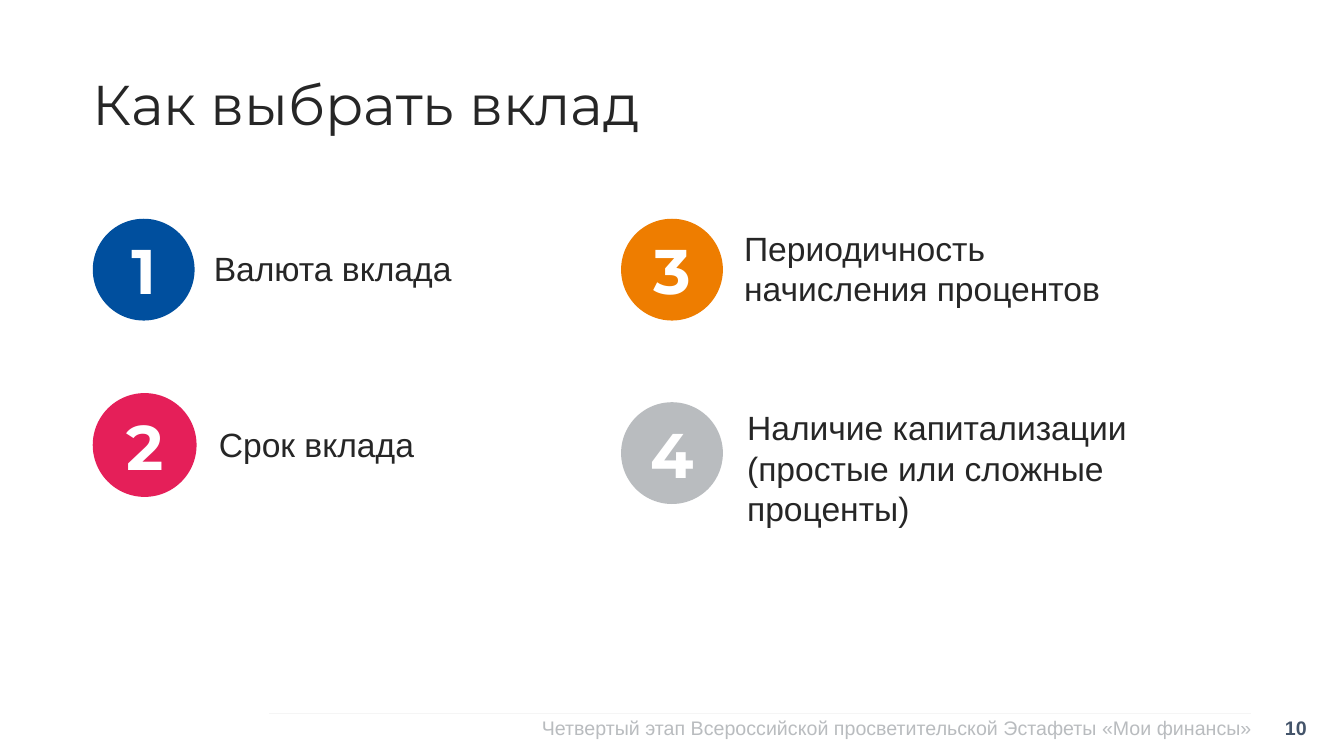
from dataclasses import dataclass

from lxml.etree import SubElement
from pptx import Presentation
from pptx.dml.color import RGBColor
from pptx.enum.shapes import MSO_CONNECTOR as Connector, MSO_SHAPE as Shape
from pptx.enum.text import MSO_ANCHOR as Anchor, PP_ALIGN as Align
from pptx.oxml.ns import qn
from pptx.util import Inches, Pt


@dataclass(frozen=True)
class Theme:
    heading: str = "Montserrat"
    body: str = "Arial"
    ink: str = "262626"
    white: str = "FFFFFF"
    blue: str = "004F9E"
    pink: str = "E51F59"
    orange: str = "EE7D00"
    grey: str = "B9BCBF"
    rule: str = "F5F5F5"
    slate: str = "44546A"
    title_size: int = 40
    number_size: int = 45
    item_size: int = 24
    footer_size: int = 14


class SlideBuilder:
    def __init__(self, slide, theme):
        self.slide = slide
        self.theme = theme

    def fill_frame(self, frame, wording, font, size, color, bold=False,
                   align=Align.LEFT, anchor=Anchor.TOP, spacing=None):
        frame.word_wrap = True
        frame.vertical_anchor = anchor
        frame.margin_left = frame.margin_right = 0
        frame.margin_top = frame.margin_bottom = 0
        paragraph = frame.paragraphs[0]
        paragraph.alignment = align
        paragraph.line_spacing = spacing
        for index, line in enumerate(wording.split("\n")):
            if index:
                paragraph.add_line_break()
            run = paragraph.add_run()
            run.text = line
            run.font.name = font
            run.font.size = Pt(size)
            run.font.bold = bold
            run.font.color.rgb = RGBColor.from_string(color)

    def text(self, box, wording, font, size, color, **style):
        area = self.slide.shapes.add_textbox(*map(Inches, box))
        self.fill_frame(area.text_frame, wording, font, size, color, **style)

    def badge(self, left, top, diameter, number, color):
        theme = self.theme
        circle = self.slide.shapes.add_shape(
            Shape.OVAL, *map(Inches, (left, top, diameter, diameter)))
        circle.shadow.inherit = False
        circle.fill.solid()
        circle.fill.fore_color.rgb = RGBColor.from_string(color)
        circle.line.fill.background()
        self.fill_frame(circle.text_frame, str(number), theme.heading,
                        theme.number_size, theme.white, bold=True,
                        align=Align.CENTER, anchor=Anchor.MIDDLE)

    def rule(self, left, right, y):
        rule = self.slide.shapes.add_connector(
            Connector.STRAIGHT, *map(Inches, (left, y, right, y)))
        rule.line.width = Pt(1)
        rule.line.color.rgb = RGBColor.from_string(self.theme.rule)
        SubElement(rule._element.spPr, qn("a:effectLst"))


def main():
    theme = Theme()
    deck = Presentation()
    deck.slide_width, deck.slide_height = Inches(13.33), Inches(7.5)
    builder = SlideBuilder(deck.slides.add_slide(deck.slide_layouts[6]), theme)

    builder.rule(2.67, 12.41, 7.08)
    builder.text((5.08, 7.1, 7.34, 0.45),
                 "Четвертый этап Всероссийской просветительской Эстафеты «Мои финансы»",
                 theme.body, theme.footer_size, theme.grey, align=Align.RIGHT)
    builder.text((12.41, 7.1, 0.55, 0.4), "10", theme.body, theme.footer_size,
                 theme.slate, bold=True, align=Align.RIGHT)
    builder.text((0.92, 0.77, 7.13, 1.24), "Как выбрать вклад", theme.heading,
                 theme.title_size, theme.ink, spacing=0.9)

    left_column, right_column = 0.92, 6.16
    criteria = [
        (left_column, 2.17, 1.01, theme.blue,
         (2.12, 2.46, 3.38, 0.4), "Валюта вклада"),
        (left_column, 3.9, 1.03, theme.pink,
         (2.17, 4.21, 2.95, 0.4), "Срок вклада"),
        (right_column, 2.17, 1.01, theme.orange,
         (7.38, 2.26, 4.69, 0.81), "Периодичность\nначисления процентов"),
        (right_column, 3.99, 1.01, theme.grey,
         (7.41, 4.04, 4.71, 1.21),
         "Наличие капитализации (простые или сложные проценты)"),
    ]
    for number, (left, top, diameter, color, box, criterion) in enumerate(criteria, 1):
        builder.badge(left, top, diameter, number, color)
        builder.text(box, criterion, theme.body, theme.item_size, theme.ink)

    deck.save("out.pptx")


if __name__ == "__main__":
    main()
